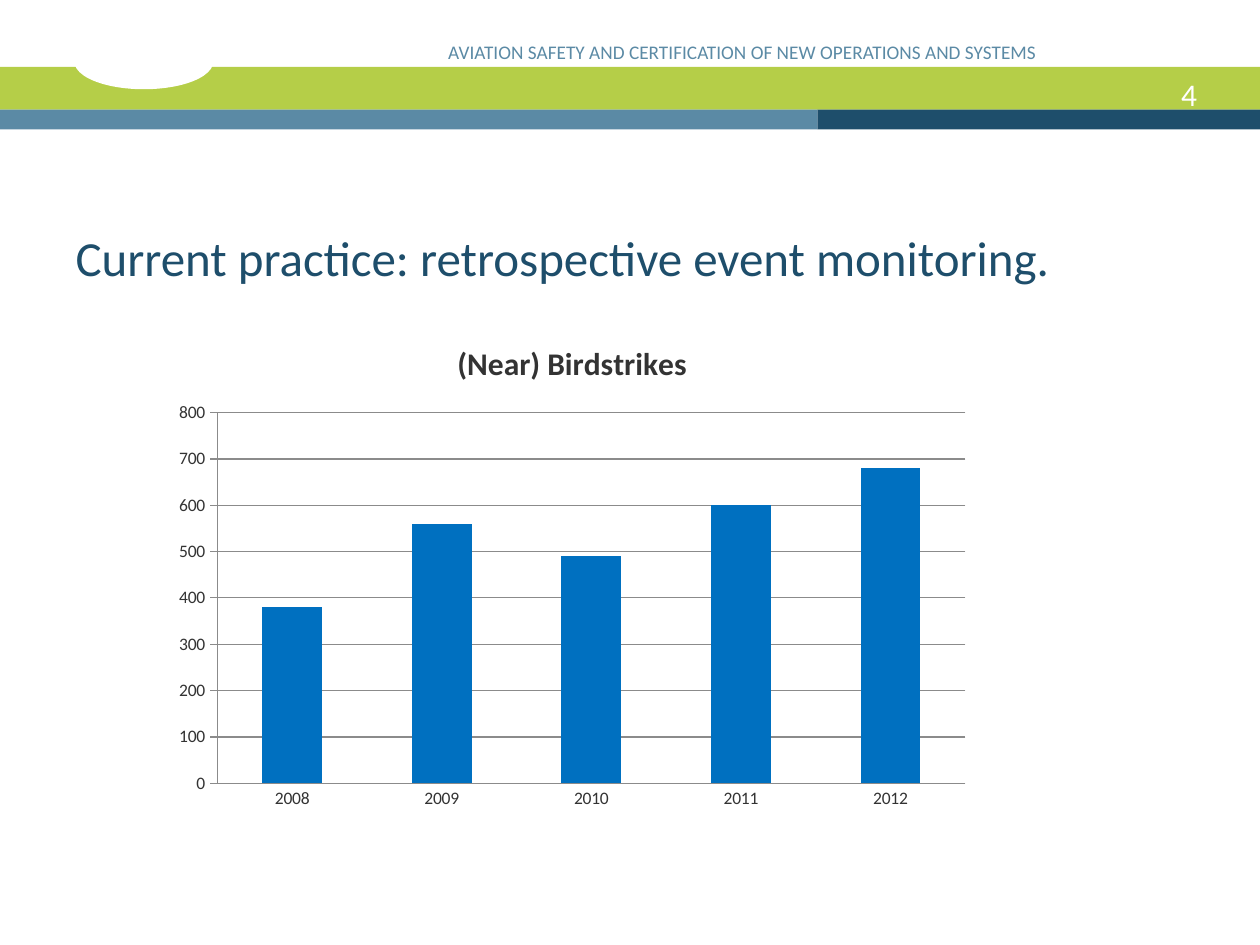
from pptx import Presentation
from pptx import util as u
from pptx.chart import data as chart_data
from pptx.dml import color
from pptx.enum import chart as chart_enum, shapes, text

COLORS = {
    "green": "B5CE48", "navy": "1E4E6B", "steel": "5B8AA5", "white": "FFFFFF",
    "bar": "0070C0", "ink": "333333", "grid": "8B8B8B",
}
FONT = "Calibri"


def rgb(name):
    return color.RGBColor.from_string(COLORS[name])


def write(frame, words, size, color_name, align):
    frame.word_wrap = True
    frame.vertical_anchor = text.MSO_ANCHOR.BOTTOM
    paragraph = frame.paragraphs[0]
    paragraph.alignment = align
    run = paragraph.add_run()
    run.text = words
    run.font.name = FONT
    run.font.size = u.Pt(size)
    run.font.color.rgb = rgb(color_name)


presentation = Presentation()
presentation.slide_width = u.Cm(25.4)
presentation.slide_height = u.Cm(19.05)
slide = presentation.slides.add_slide(presentation.slide_layouts[5])

# Header bands, with the white oval cutting into the green one
rectangle, oval = shapes.MSO_SHAPE.RECTANGLE, shapes.MSO_SHAPE.OVAL
for kind, left, top, width, height, fill in (
    (rectangle, 0, 1.35, 25.4, 0.86, "green"),
    (rectangle, 16.48, 2.21, 8.92, 0.4, "navy"),
    (rectangle, 0, 2.21, 16.48, 0.4, "steel"),
    (oval, 1.5, 0.69, 2.8, 1.11, "white"),
):
    shape = slide.shapes.add_shape(kind, u.Cm(left), u.Cm(top), u.Cm(width), u.Cm(height))
    shape.shadow.inherit = False
    shape.fill.solid()
    shape.fill.fore_color.rgb = rgb(fill)
    shape.line.fill.background()

title = slide.shapes.title
title.left, title.top, title.width, title.height = u.Cm(1.27), u.Cm(2.92), u.Cm(22.86), u.Cm(2.97)
write(title.text_frame, "Current practice: retrospective event monitoring.", 28, "navy", text.PP_ALIGN.LEFT)

# Page number and running header
for words, left, top, width, height, size, color_name in (
    ("4", 22.02, 1.37, 2.11, 1.02, 18, "white"),
    ("AVIATION SAFETY AND CERTIFICATION OF NEW OPERATIONS AND SYSTEMS",
     7.49, 0.13, 13.41, 1.27, 11, "steel"),
):
    box = slide.shapes.add_textbox(u.Cm(left), u.Cm(top), u.Cm(width), u.Cm(height))
    box.text_frame.margin_right = 0
    write(box.text_frame, words, size, color_name, text.PP_ALIGN.RIGHT)

birdstrikes = chart_data.CategoryChartData()
birdstrikes.categories = ["2008", "2009", "2010", "2011", "2012"]
birdstrikes.add_series("Series 1", (380, 560, 490, 600, 680))
chart = slide.shapes.add_chart(
    chart_enum.XL_CHART_TYPE.COLUMN_CLUSTERED,
    u.Cm(3.28), u.Cm(6.43), u.Cm(16.51), u.Cm(10.06), birdstrikes,
).chart
chart.has_legend = False
chart.font.name = FONT
chart.font.size = u.Pt(10)
chart.font.color.rgb = rgb("ink")

chart.has_title = True
run = chart.chart_title.text_frame.paragraphs[0].add_run()
run.text = "(Near) Birdstrikes"
run.font.name = FONT
run.font.size = u.Pt(18)
run.font.bold = True
run.font.color.rgb = rgb("ink")
chart.chart_title.include_in_layout = False

plot = chart.plots[0]
plot.vary_by_categories = False
plot.gap_width = 150
series = plot.series[0]
series.format.fill.solid()
series.format.fill.fore_color.rgb = rgb("bar")

chart.category_axis.major_tick_mark = chart_enum.XL_TICK_MARK.NONE
value_axis = chart.value_axis
value_axis.major_tick_mark = chart_enum.XL_TICK_MARK.OUTSIDE
value_axis.minimum_scale, value_axis.maximum_scale, value_axis.major_unit = 0, 800, 100
value_axis.has_major_gridlines = True
for part in (chart.category_axis, value_axis, value_axis.major_gridlines):
    part.format.line.color.rgb = rgb("grid")
    part.format.line.width = u.Pt(0.75)

presentation.save("out.pptx")
